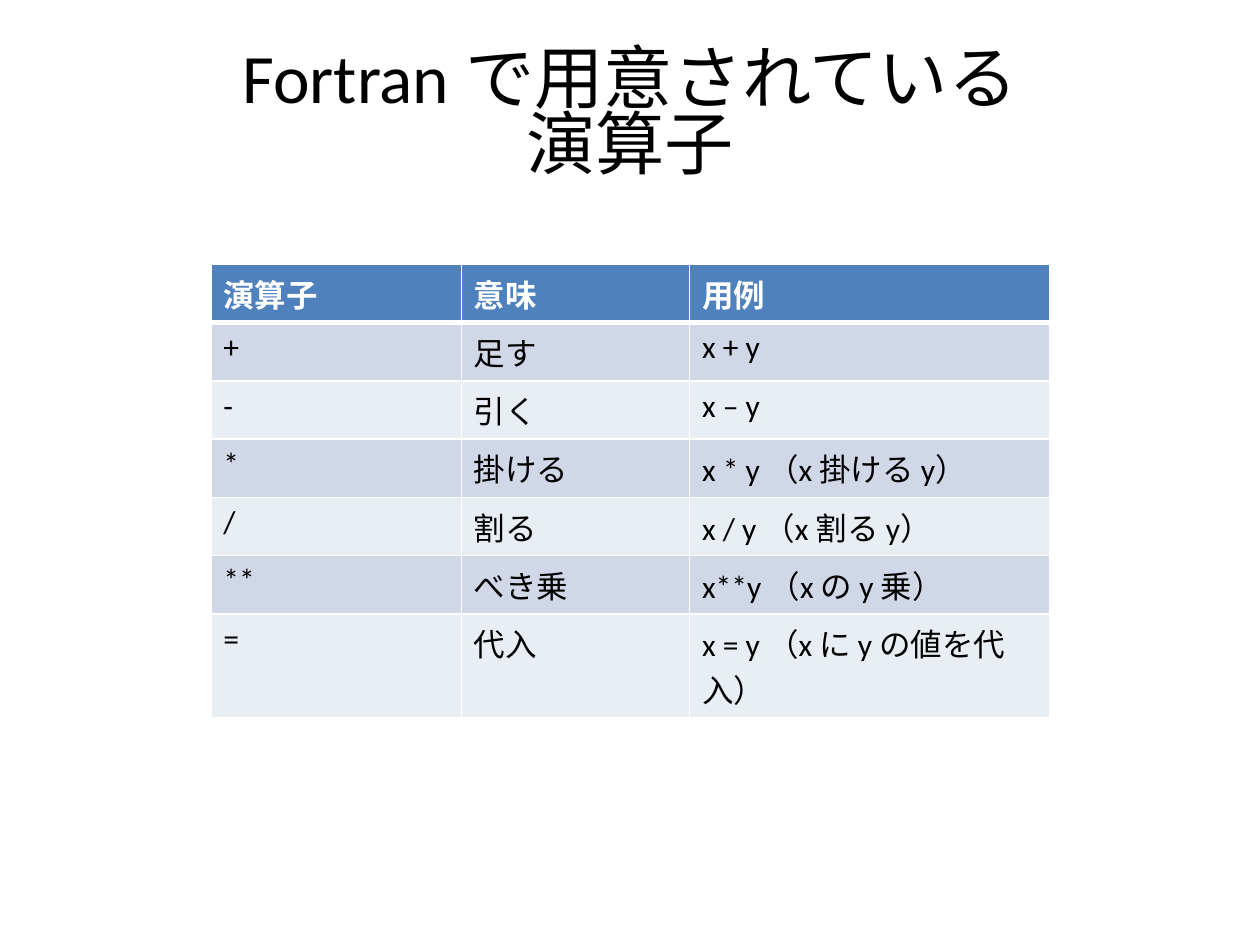
import dataclasses

import lxml.etree
import pptx
import pptx.dml.color
import pptx.enum.text
import pptx.oxml.ns
import pptx.util

Cm = pptx.util.Cm
Pt = pptx.util.Pt

FONT = "Calibri"
WHITE = "FFFFFF"
BLACK = "000000"
HEADER_FILL = "4F81BD"
BAND_FILLS = ("D0D8E8", "E9EDF4")
COLUMN_WIDTHS = (5.05, 4.6, 7.27)
ROW_HEIGHT = 1.03


@dataclasses.dataclass(frozen=True)
class Operator:
    symbol: str
    meaning: str
    example: str


HEADER = Operator("演算子", "意味", "用例")
OPERATORS = (
    Operator("+", "足す", "x + y"),
    Operator("-", "引く", "x – y"),
    Operator("*", "掛ける", "x * y （x 掛ける y）"),
    Operator("/", "割る", "x / y （x 割る y）"),
    Operator("**", "べき乗", "x**y （x の y 乗）"),
    Operator("=", "代入", "x = y （x に y の値を代入）"),
)


def color(value: str) -> pptx.dml.color.RGBColor:
    return pptx.dml.color.RGBColor.from_string(value)


def write_text(frame, text: str, *, size: float, ink: str = BLACK,
               bold: bool = False, align=pptx.enum.text.PP_ALIGN.LEFT,
               spacing: float = 1.0) -> None:
    frame.text = text
    para = frame.paragraphs[0]
    para.alignment = align
    para.line_spacing = spacing
    for span in para.runs:
        span.font.name = FONT
        span.font.size = Pt(size)
        span.font.bold = bold
        span.font.color.rgb = color(ink)


def add_border(cell, side: str, width: float) -> None:
    properties = cell._tc.get_or_add_tcPr()
    line = lxml.etree.SubElement(
        properties, pptx.oxml.ns.qn(f"a:ln{side}"), w=str(Pt(width)))
    fill = lxml.etree.SubElement(line, pptx.oxml.ns.qn("a:solidFill"))
    lxml.etree.SubElement(fill, pptx.oxml.ns.qn("a:srgbClr"), val=WHITE)


def style_cell(cell, fill: str, top: float, bottom: float) -> None:
    for side, width in (("L", 1), ("R", 1), ("T", top), ("B", bottom)):
        add_border(cell, side, width)
    cell.fill.solid()
    cell.fill.fore_color.rgb = color(fill)


def add_title(page, text: str) -> None:
    title = page.shapes.title
    title.left, title.top = Cm(1.27), Cm(0.76)
    title.width, title.height = Cm(22.86), Cm(3.18)
    frame = title.text_frame
    frame.word_wrap = True
    frame.auto_size = pptx.enum.text.MSO_AUTO_SIZE.NONE
    frame.vertical_anchor = pptx.enum.text.MSO_ANCHOR.MIDDLE
    write_text(frame, text, size=39.6, spacing=0.8,
               align=pptx.enum.text.PP_ALIGN.CENTER)


def add_operator_table(page, entries: tuple[Operator, ...]) -> None:
    table = page.shapes.add_table(
        len(entries), len(COLUMN_WIDTHS), Cm(4.25), Cm(5.33),
        Cm(sum(COLUMN_WIDTHS)), Cm(ROW_HEIGHT * len(entries))).table
    for column, width in zip(table.columns, COLUMN_WIDTHS):
        column.width = Cm(width)
    for index, entry in enumerate(entries):
        table.rows[index].height = Cm(ROW_HEIGHT)
        heading = index == 0
        fill = HEADER_FILL if heading else BAND_FILLS[(index - 1) % 2]
        for cell, text in zip(table.rows[index].cells, dataclasses.astuple(entry)):
            style_cell(cell, fill, top=3 if index == 1 else 1,
                       bottom=3 if heading else 1)
            write_text(cell.text_frame, text, size=18, bold=heading,
                       ink=WHITE if heading else BLACK)


def main() -> None:
    deck = pptx.Presentation()
    deck.slide_width, deck.slide_height = Cm(25.4), Cm(19.05)
    page = deck.slides.add_slide(deck.slide_layouts[5])
    add_title(page, "Fortran で用意されている\v演算子")
    add_operator_table(page, (HEADER, *OPERATORS))
    deck.save("out.pptx")


if __name__ == "__main__":
    main()
